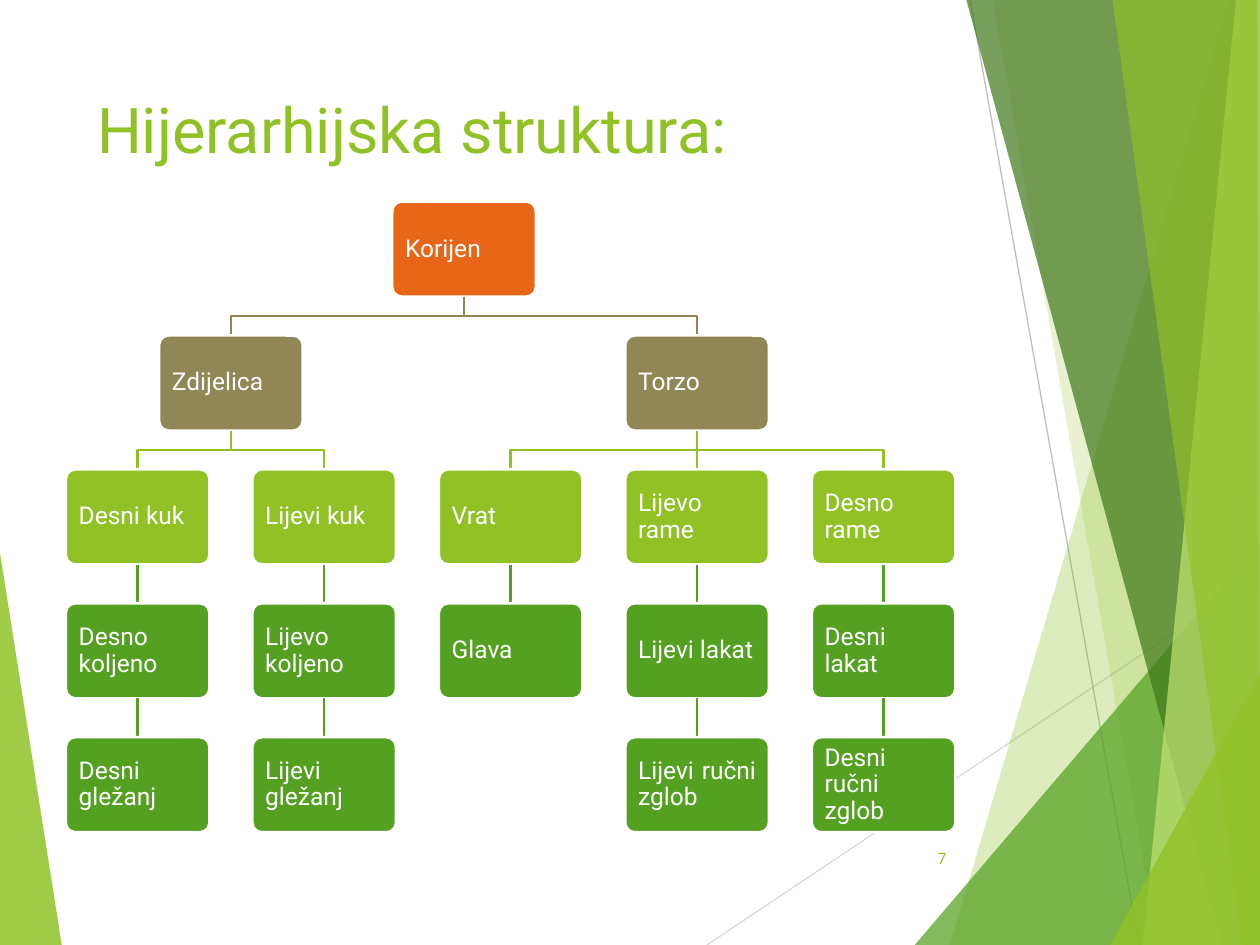
from dataclasses import dataclass

import lxml.etree
import pptx
import pptx.dml.color
import pptx.enum.shapes
import pptx.enum.text
import pptx.oxml.ns
import pptx.util

FONT = "Roboto"
GREEN, DARK_GREEN, WHITE = "90C226", "54A021", "FFFFFF"
LEVEL_COLORS = ["E76618", "918655", GREEN, DARK_GREEN, DARK_GREEN]

FIRST_CENTER, COLUMN_STEP, BOX_WIDTH = 10.93, 14.8, 11.4
FIRST_TOP, ROW_STEP, BOX_HEIGHT = 21.33, 14.17, 10.07

Point = tuple[float, float]


@dataclass
class Facet:
    points: list[Point]
    color: str
    opacity: int


@dataclass
class Joint:
    name: str
    children: tuple["Joint", ...] = ()
    column: float = 0


def chain(*names: str) -> Joint:
    return Joint(names[0], (chain(*names[1:]),) if names[1:] else ())


LEFT_FACET = Facet([(0, 58.5), (4.9, 100), (0, 100)], GREEN, 85)
RIGHT_FACETS = [
    Facet([(97.5, 0), (75.4, 100), (100, 100), (100, 0)], GREEN, 30),
    Facet([(78.8, 0), (91.9, 100), (100, 100), (100, 0)], GREEN, 20),
    Facet([(72.6, 100), (100, 57.2), (100, 100)], DARK_GREEN, 72),
    Facet([(76.7, 0), (97, 100), (100, 100), (100, 0)], "3F7819", 70),
    Facet([(98.1, 0), (90.7, 100), (100, 100), (100, 0)], "C0E474", 70),
    Facet([(88.3, 0), (98.6, 100), (100, 100), (99.8, 0)], GREEN, 65),
    Facet([(88.1, 100), (100, 71.3), (100, 100)], GREEN, 80),
]

SKELETON = Joint("Korijen", (
    Joint("Zdijelica", (
        chain("Desni kuk", "Desno koljeno", "Desni gležanj"),
        chain("Lijevi kuk", "Lijevo koljeno", "Lijevi gležanj"),
    )),
    Joint("Torzo", (
        chain("Vrat", "Glava"),
        chain("Lijevo rame", "Lijevi lakat", "Lijevi ručni zglob"),
        chain("Desno rame", "Desni lakat", "Desni ručni zglob"),
    )),
))

deck = pptx.Presentation()
deck.slide_width = pptx.util.Inches(10)
deck.slide_height = pptx.util.Inches(7.5)
page = deck.slides.add_slide(deck.slide_layouts[5])


def rgb(value: str) -> pptx.dml.color.RGBColor:
    return pptx.dml.color.RGBColor.from_string(value)


def across(percent: float) -> int:
    return round(deck.slide_width * percent / 100)


def down(percent: float) -> int:
    return round(deck.slide_height * percent / 100)


def place(shape, left: float, top: float, width: float, height: float) -> None:
    shape.left, shape.top = across(left), down(top)
    shape.width, shape.height = across(width), down(height)


def write(shape, text: str, size: float, color: str, align: str, anchor: str):
    frame = shape.text_frame
    frame.word_wrap = True
    frame.vertical_anchor = pptx.enum.text.MSO_ANCHOR[anchor]
    para = frame.paragraphs[0]
    para.alignment = pptx.enum.text.PP_ALIGN[align]
    span = para.add_run()
    span.text = text
    span.font.name = FONT
    span.font.size = pptx.util.Pt(size)
    span.font.color.rgb = rgb(color)
    return frame


def draw_path(points: list[Point], closed: bool):
    corners = [(across(x), down(y)) for x, y in points]
    builder = page.shapes.build_freeform(*corners[0], scale=1.0)
    builder.add_line_segments(corners[1:], close=closed)
    shape = builder.convert_to_shape()
    shape.shadow.inherit = False
    return shape


def draw_facet(facet: Facet) -> None:
    shape = draw_path(facet.points, True)
    shape.fill.solid()
    shape.fill.fore_color.rgb = rgb(facet.color)
    shape.line.fill.background()
    tint = shape.fill._xPr.find(".//" + pptx.oxml.ns.qn("a:srgbClr"))
    alpha = lxml.etree.SubElement(tint, pptx.oxml.ns.qn("a:alpha"))
    alpha.set("val", str(facet.opacity * 1000))


def draw_line(start: Point, end: Point, color: str, weight: float) -> None:
    line = page.shapes.add_connector(
        pptx.enum.shapes.MSO_CONNECTOR.STRAIGHT,
        across(start[0]), down(start[1]), across(end[0]), down(end[1]))
    line.line.color.rgb = rgb(color)
    line.line.width = pptx.util.Pt(weight)
    properties = line._element.spPr
    lxml.etree.SubElement(properties, pptx.oxml.ns.qn("a:effectLst"))


def draw_link(parent: Joint, child: Joint, level: int) -> None:
    start, end = (FIRST_CENTER + COLUMN_STEP * joint.column for joint in (parent, child))
    bottom = FIRST_TOP + ROW_STEP * level
    top = bottom - ROW_STEP + BOX_HEIGHT
    middle = (top + bottom) / 2
    color = LEVEL_COLORS[level]
    if parent.column == child.column:
        draw_line((start, top), (end, bottom), color, 1.5)
        return
    elbow = draw_path([(start, top), (start, middle), (end, middle), (end, bottom)], False)
    elbow.fill.background()
    elbow.line.color.rgb = rgb(color)
    elbow.line.width = pptx.util.Pt(1.5)


def draw_joint(joint: Joint, level: int = 0) -> None:
    box = page.shapes.add_shape(pptx.enum.shapes.MSO_SHAPE.ROUNDED_RECTANGLE, 0, 0, 0, 0)
    center = FIRST_CENTER + COLUMN_STEP * joint.column
    place(box, center - BOX_WIDTH / 2, FIRST_TOP + ROW_STEP * level, BOX_WIDTH, BOX_HEIGHT)
    box.adjustments[0] = 0.1
    box.shadow.inherit = False
    box.fill.solid()
    box.fill.fore_color.rgb = rgb(LEVEL_COLORS[level])
    box.line.color.rgb = rgb(WHITE)
    box.line.width = pptx.util.Pt(1.5)
    frame = write(box, joint.name, 14, WHITE, "JUSTIFY", "MIDDLE")
    frame.margin_left = frame.margin_right = pptx.util.Inches(0.08)
    frame.margin_top = frame.margin_bottom = pptx.util.Inches(0.08)
    frame.paragraphs[0].line_spacing = 0.9
    for child in joint.children:
        draw_link(joint, child, level + 1)
        draw_joint(child, level + 1)


def assign_columns(joint: Joint, free_column: int = 0) -> int:
    if not joint.children:
        joint.column = free_column
        return free_column + 1
    for child in joint.children:
        free_column = assign_columns(child, free_column)
    joint.column = (joint.children[0].column + joint.children[-1].column) / 2
    return free_column


def main() -> None:
    draw_facet(LEFT_FACET)
    draw_line((56.1, 100), (100, 60.9), "D9D9D9", 0.75)
    draw_line((77, 0), (90.4, 100), "BFBFBF", 0.75)
    for facet in RIGHT_FACETS:
        draw_facet(facet)

    title = page.shapes.title
    place(title, 6.7, 8.93, 69.4, 14)
    write(title, "Hijerarhijska struktura:", 36, GREEN, "LEFT", "TOP")
    number = page.shapes.add_textbox(0, 0, 0, 0)
    place(number, 70.5, 88.13, 5.6, 5.33)
    write(number, "7", 9, GREEN, "RIGHT", "MIDDLE")

    assign_columns(SKELETON)
    draw_joint(SKELETON)
    deck.save("out.pptx")


if __name__ == "__main__":
    main()
